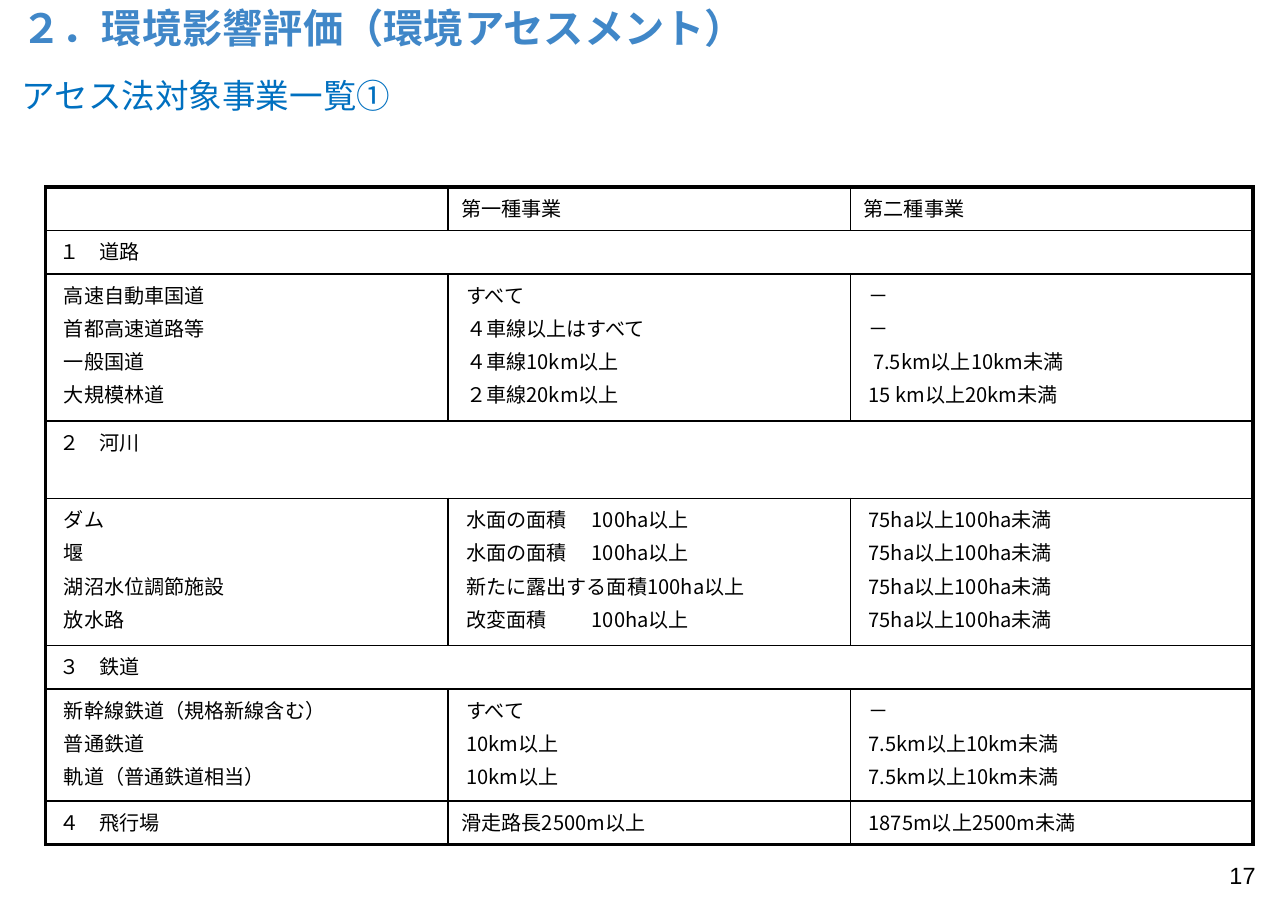
"""Build the slide that lists the projects subject to the assessment law."""
from lxml import etree
from pptx import Presentation
from pptx import util as u
from pptx.dml.color import RGBColor
from pptx.enum import text
from pptx.oxml import ns

BLACK = RGBColor(0, 0, 0)
BLUE = RGBColor(0x40, 0x87, 0xC8)
DEEP = RGBColor(0x00, 0x70, 0xC0)
FONT = "Noto Sans CJK JP"
WIDE, HIGH = 10.67, 7.5

TITLE = "２．環境影響評価（環境アセスメント）"
TOPIC = "アセス法対象事業一覧①"
PAGE = "17"

ROWS = [
    (0.36, ["", "第一種事業", "第二種事業"]),
    (0.36, ["１　道路"]),
    (1.22, ["高速自動車国道\n首都高速道路等\n一般国道\n大規模林道",
            "すべて\n４車線以上はすべて\n４車線10km以上\n２車線20km以上",
            "－\n－\n 7.5km以上10km未満\n15 km以上20km未満"]),
    (0.64, ["２　河川"]),
    (1.22, ["ダム\n堰\n湖沼水位調節施設\n放水路",
            "水面の面積\t100ha以上\n水面の面積\t100ha以上\n"
            "新たに露出する面積100ha以上\n改変面積\t100ha以上",
            "\n".join(["75ha以上100ha未満"] * 4)]),
    (0.36, ["３　鉄道"]),
    (0.93, ["新幹線鉄道（規格新線含む）\n普通鉄道\n軌道（普通鉄道相当）",
            "すべて\n10km以上\n10km以上",
            "－\n7.5km以上10km未満\n7.5km以上10km未満"]),
    (0.36, ["４　飛行場", "滑走路長2500m以上", "1875m以上2500m未満"]),
]
COLS = 3
LEFT, TOP, SPAN = 0.38, 1.55, 10
PAD, STEP, TAB = 0.11, 0.04, 1.04
THIN, THICK = 1, 2.25


def add(parent, tag, **attrs):
    return etree.SubElement(parent, ns.qn(tag), attrs)


def style(par, size, color, face=FONT, bold=False):
    for run in par.runs:
        font = run.font
        font.size, font.bold, font.name = u.Pt(size), bold, face
        font.color.rgb = color
        add(font._element, "a:ea", typeface=face)


def label(slide, words, box, size, color, **look):
    frame = slide.shapes.add_textbox(*map(u.Inches, box)).text_frame
    frame.word_wrap = True
    frame.text = words
    style(frame.paragraphs[0], size, color, **look)
    return frame


def border(cell, edges):
    props = cell._tc.get_or_add_tcPr()
    for side, width in zip("LRTB", edges):
        line = add(props, "a:ln" + side, w=str(u.Pt(width)))
        add(add(line, "a:solidFill"), "a:srgbClr", val=str(BLACK))
    cell.fill.background()


def write(cell, words, inset):
    cell.margin_left = u.Inches(inset)
    cell.margin_right = u.Inches(PAD)
    cell.text_frame.text = words
    for n, par in enumerate(cell.text_frame.paragraphs):
        if n:
            par.space_before = u.Pt(2.4)
        if "\t" in par.text:
            tabs = add(par._p.get_or_add_pPr(), "a:tabLst")
            add(tabs, "a:tab", pos=str(u.Inches(TAB)), algn="l")
        style(par, 12, BLACK)
        par._p.get_or_add_endParaRPr().set("sz", "1200")


def grid(slide):
    tall = sum(height for height, _ in ROWS)
    box = map(u.Inches, (LEFT, TOP, SPAN, tall))
    table = slide.shapes.add_table(len(ROWS), COLS, *box).table
    table.first_row = table.horz_banding = False
    for col in table.columns:
        col.width = u.Inches(SPAN / COLS)
    last = len(ROWS) - 1
    for r, (height, words) in enumerate(ROWS):
        table.rows[r].height = u.Inches(height)
        whole = len(words) == 1
        if whole:
            table.cell(r, 0).merge(table.cell(r, COLS - 1))
        for c in range(COLS):
            cell = table.cell(r, c)
            entry = words[c] if c < len(words) else ""
            inner = "\n" in entry or (r, c) == (last, COLS - 1)
            write(cell, entry, PAD + STEP * inner)
            outer = (whole or c == 0, whole or c == COLS - 1, r == 0, r == last)
            border(cell, [THICK if edge else THIN for edge in outer])


def main():
    deck = Presentation()
    deck.slide_width, deck.slide_height = u.Inches(WIDE), u.Inches(HIGH)
    slide = deck.slides.add_slide(deck.slide_layouts[6])
    grid(slide)
    label(slide, TITLE, (0.08, -0.02, 7.66, 0.52), 24, BLUE, bold=True)
    label(slide, TOPIC, (0.08, 0.57, 8.01, 0.52), 20, DEEP)
    page = label(slide, PAGE, (8.28, 7, 2.22, 0.5), 14, BLACK, face="Arial")
    page.vertical_anchor = text.MSO_ANCHOR.MIDDLE
    page.paragraphs[0].alignment = text.PP_ALIGN.RIGHT
    deck.save("out.pptx")


if __name__ == "__main__":
    main()
